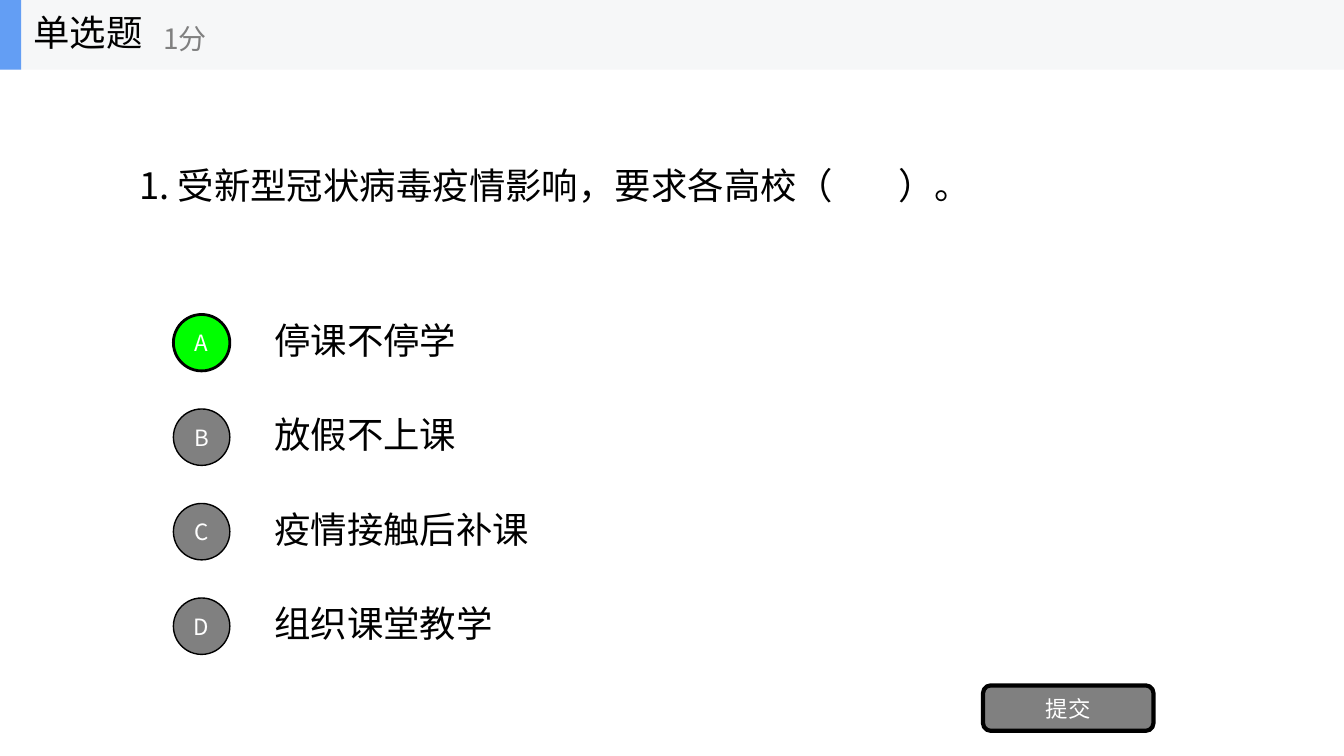
from lxml import etree
from pptx import Presentation
from pptx.dml.color import RGBColor
from pptx.enum.shapes import MSO_SHAPE
from pptx.enum.text import MSO_ANCHOR, MSO_AUTO_SIZE, PP_ALIGN
from pptx.oxml.ns import qn
from pptx.util import Inches, Pt

LEFT, CENTER = PP_ALIGN.LEFT, PP_ALIGN.CENTER
MIDDLE = MSO_ANCHOR.MIDDLE
NO_AUTOFIT = MSO_AUTO_SIZE.NONE
RECTANGLE, ROUNDED, OVAL = MSO_SHAPE.RECTANGLE, MSO_SHAPE.ROUNDED_RECTANGLE, MSO_SHAPE.OVAL

QUESTION = "1. 受新型冠状病毒疫情影响，要求各高校（        ）。"
OPTIONS = [
    ("A", "停课不停学"),
    ("B", "放假不上课"),
    ("C", "疫情接触后补课"),
    ("D", "组织课堂教学"),
]
ANSWER = "A"
QUESTION_TYPE = "单选题"
SCORE = "1分"
SUBMIT = "提交"

FONT = "Noto Sans CJK SC"
COLORS = {
    "text": "000000",
    "gray": "808080",
    "white": "FFFFFF",
    "answer": "00FF00",
    "header": "F6F7F8",
    "accent": "639EF4",
}
SLIDE_WIDTH, SLIDE_HEIGHT = 13.33, 7.5
HEADER_HEIGHT = 0.69
OPTION_TOP, OPTION_STEP, OPTION_HEIGHT = 3.05, 0.9375, 0.7
CIRCLE_SIZE = 0.56


def color(name):
    return RGBColor.from_string(COLORS[name])


def write(shape, text, size, color_name, align=LEFT, spacing=0.9, wrap=True):
    frame = shape.text_frame
    frame.auto_size = NO_AUTOFIT
    frame.word_wrap = wrap
    frame.vertical_anchor = MIDDLE
    frame.margin_left = frame.margin_right = Inches(0.05)
    frame.margin_top = frame.margin_bottom = Inches(0.05)
    paragraph = frame.paragraphs[0]
    paragraph.text = text
    paragraph.alignment = align
    paragraph.line_spacing = spacing
    font = paragraph.font
    font.size = Pt(size)
    font.name = FONT
    font.color.rgb = color(color_name)
    properties = paragraph._p.pPr.find(qn("a:defRPr"))
    etree.SubElement(properties, qn("a:ea")).set("typeface", FONT)


def add_label(slide, box, text, size=26, color_name="text", wrap=True):
    label = slide.shapes.add_textbox(*map(Inches, box))
    write(label, text, size, color_name, wrap=wrap)


def add_block(slide, kind, box, fill, line_width=0):
    shape = slide.shapes.add_shape(kind, *map(Inches, box))
    shape.shadow.inherit = False
    shape.fill.solid()
    shape.fill.fore_color.rgb = color(fill)
    if line_width:
        shape.line.color.rgb = color("text")
        shape.line.width = Pt(line_width)
    else:
        shape.line.fill.background()
    return shape


def add_button(slide, kind, box, text, fill, line_width):
    button = add_block(slide, kind, box, fill, line_width)
    write(button, text, 16, "white", CENTER, 1.0)


def add_question(slide):
    title = slide.shapes.title
    title.left, title.top, title.width, title.height = map(Inches, (1.33, 0.69, 10.67, 2.34))
    write(title, QUESTION, 26, "text")


def add_options(slide):
    inset = (OPTION_HEIGHT - CIRCLE_SIZE) / 2
    for index, (letter, text) in enumerate(OPTIONS):
        top = OPTION_TOP + index * OPTION_STEP
        add_label(slide, (2.67, top, 9.33, OPTION_HEIGHT), text)
        fill, line_width = ("answer", 2) if letter == ANSWER else ("gray", 1)
        circle = (1.72, top + inset, CIRCLE_SIZE, CIRCLE_SIZE)
        add_button(slide, OVAL, circle, letter, fill, line_width)


def add_header(slide):
    add_block(slide, RECTANGLE, (0, 0, SLIDE_WIDTH, HEADER_HEIGHT), "header")
    add_block(slide, RECTANGLE, (0, 0, 0.21, HEADER_HEIGHT), "accent")
    add_label(slide, (0.28, 0, 2.08, HEADER_HEIGHT), QUESTION_TYPE, wrap=False)
    add_label(slide, (1.57, 0.12, 2.5, 0.56), SCORE, 20, "gray", wrap=False)


def main():
    presentation = Presentation()
    presentation.slide_width = Inches(SLIDE_WIDTH)
    presentation.slide_height = Inches(SLIDE_HEIGHT)
    slide = presentation.slides.add_slide(presentation.slide_layouts.get_by_name("Title Only"))
    add_question(slide)
    add_options(slide)
    add_button(slide, ROUNDED, (9.75, 6.8, 1.69, 0.45), SUBMIT, "gray", 3)
    add_header(slide)
    presentation.save("out.pptx")


if __name__ == "__main__":
    main()
